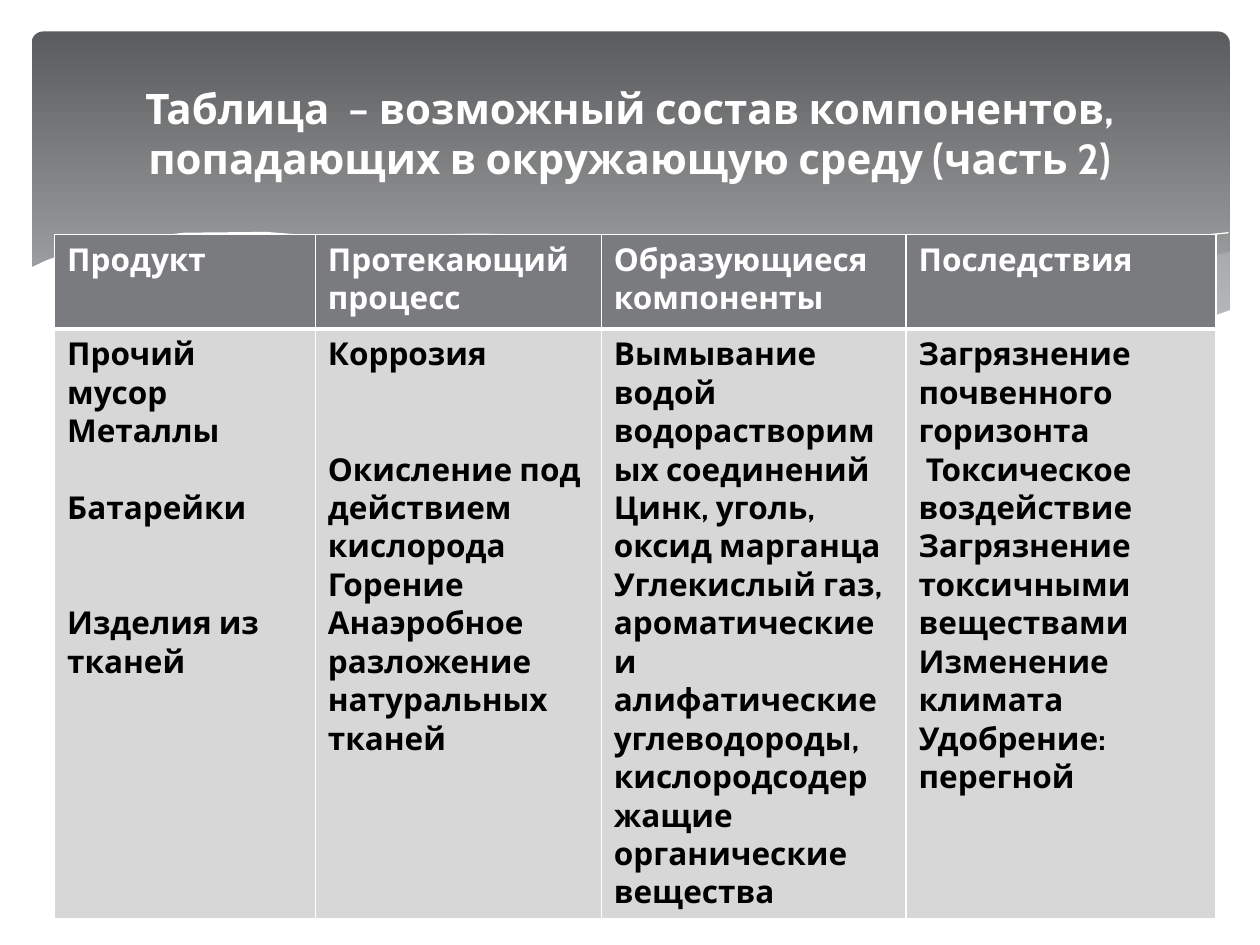
"""Build a slide with a table of waste products and their environmental effects."""
from lxml import etree
from pptx import Presentation
from pptx.dml.color import RGBColor
from pptx.enum.shapes import MSO_SHAPE
from pptx.enum.text import MSO_ANCHOR, PP_ALIGN
from pptx.oxml.ns import qn
from pptx.util import Pt

ROUNDED = MSO_SHAPE.ROUNDED_RECTANGLE
MIDDLE = MSO_ANCHOR.MIDDLE
CENTER = PP_ALIGN.CENTER

THEME = {
    "font": "Cabin", "title_size": 24, "table_size": 18, "line_height": 21.96,
    "white": "FFFFFF", "black": "000000", "mist": "CDD7D9",
    "banner_top": "5B5C5E", "banner_bottom": "AFB0B2",
    "header": "797B7E", "body": "D7D7D8", "thin": 1, "thick": 3,
}

TITLE = "Таблица  – возможный состав компонентов, попадающих в окружающую среду (часть 2)"
HEADERS = ["Продукт", "Протекающий процесс", "Образующиеся компоненты", "Последствия"]
COLUMN_WIDTHS = [149, 163.4, 174.2, 177]
ROW_HEIGHTS = [54, 273.6]

# Each entry: lines of space above, wording
EFFECTS = [
    [(0, "Прочий мусор"), (0, "Металлы"), (1, "Батарейки"), (2, "Изделия из тканей")],
    [(0, "Коррозия"), (2, "Окисление под действием кислорода"), (0, "Горение"),
     (0, "Анаэробное разложение натуральных тканей")],
    [(0, "Вымывание водой водорастворимых соединений"),
     (0, "Цинк, уголь, оксид марганца Углекислый газ, ароматические и алифатические "
         "углеводороды, кислородсодержащие органические вещества")],
    [(0, "Загрязнение почвенного горизонта"), (0, " Токсическое воздействие"),
     (0, "Загрязнение токсичными веществами"), (0, "Изменение климата"),
     (0, "Удобрение: перегной")],
]

RIGHT_WAVE = [
    (702, 144), (682, 148.5), (652, 153.5), (620, 160.5), (579.5, 170.5), (542, 178),
    (508, 185), (476, 191), (508, 195), (536, 198), (562, 199.5), (586, 200),
    (615, 199), (640, 196), (663, 191), (683, 185), (703, 178), (703, 144)]
MIDDLE_WAVE = [
    (643, 196.5), (602.5, 191), (558, 183), (508, 173), (453, 160), (420, 152),
    (390, 146), (361, 141), (335, 137.5), (302, 134.5), (274, 133), (248, 134),
    (225, 135.5), (206, 137.5), (246, 143), (291, 152), (323, 160), (382, 173),
    (433, 183.5), (479, 191.5), (520, 197), (557, 199.5), (589, 200), (617, 199.5)]
FALLING_LINE = [
    (222.5, 140.5), (236, 138), (261, 136), (288.5, 134.5), (324, 135.5), (367, 138),
    (419, 144), (479, 153.5), (547, 168), (598, 180.5), (653, 196)]
RISING_LINE = [(441, 185), (484, 173.5), (539, 160.5), (602, 147), (655, 138), (702, 133)]
FRONT_WAVE = [
    (703.5, 177), (677, 186.5), (647, 193.5), (612, 198), (571, 199.5), (523, 197),
    (467, 191), (400, 180), (322, 158.5), (263, 145.5), (210, 137), (152, 132.5),
    (105, 133), (68, 137.5), (42, 143), (26, 149), (16.5, 153.5), (16.5, 237),
    (703.5, 237)]

# Each entry: outline, fill opacity in percent (None for an open line)
WAVES = [(RIGHT_WAVE, 29), (MIDDLE_WAVE, 40), (FALLING_LINE, None),
         (RISING_LINE, None), (FRONT_WAVE, 100)]


def color(name):
    return RGBColor.from_string(THEME[name])


def style(paragraph, size, ink):
    font = paragraph.font
    font.name, font.size, font.bold = THEME["font"], Pt(THEME[size]), True
    font.color.rgb = color(ink)


def add_banner(slide):
    banner = slide.shapes.add_shape(ROUNDED, Pt(18), Pt(18), Pt(684.7), Pt(194.4))
    banner.shadow.inherit = False
    banner.adjustments[0] = 0.034
    banner.line.fill.background()
    banner.fill.gradient()
    banner.fill.gradient_angle = 270
    tones = (("banner_top", 0), ("banner_bottom", 0.9))
    for stop, (name, position) in zip(banner.fill.gradient_stops, tones):
        stop.color.rgb, stop.position = color(name), position


def add_wave(slide, outline, opacity):
    points = [(Pt(x), Pt(y)) for x, y in outline]
    builder = slide.shapes.build_freeform(*points[0])
    builder.add_line_segments(points[1:], close=opacity is not None)
    wave = builder.convert_to_shape()
    wave.shadow.inherit = False
    if opacity is None:
        wave.fill.background()
        wave.line.color.rgb = color("white")
        wave.line.width = Pt(0)
        return
    wave.line.fill.background()
    wave.fill.solid()
    wave.fill.fore_color.rgb = color("white" if opacity == 100 else "mist")
    if opacity < 100:
        tint = wave.fill._xPr.find(qn("a:solidFill"))[0]
        etree.SubElement(tint, qn("a:alpha"), val=str(opacity * 1000))


def set_borders(cell, top, bottom):
    properties = cell._tc.get_or_add_tcPr()
    thin = THEME["thin"]
    for side, width in (("L", thin), ("R", thin), ("T", top), ("B", bottom)):
        border = etree.SubElement(properties, qn(f"a:ln{side}"), w=str(Pt(width)))
        fill = etree.SubElement(border, qn("a:solidFill"))
        etree.SubElement(fill, qn("a:srgbClr"), val=THEME["white"])


def fill_cell(cell, entries, background, ink, top, bottom):
    set_borders(cell, THEME[top], THEME[bottom])
    cell.fill.solid()
    cell.fill.fore_color.rgb = color(background)
    frame = cell.text_frame
    for index, (gap, wording) in enumerate(entries):
        paragraph = frame.add_paragraph() if index else frame.paragraphs[0]
        paragraph.text = wording
        paragraph.space_before = Pt(gap * THEME["line_height"])
        style(paragraph, "table_size", ink)


def add_effects_table(slide):
    table = slide.shapes.add_table(
        len(ROW_HEIGHTS), len(HEADERS), Pt(31.2), Pt(134),
        Pt(sum(COLUMN_WIDTHS)), Pt(sum(ROW_HEIGHTS))).table
    for row, height in zip(table.rows, ROW_HEIGHTS):
        row.height = Pt(height)
    for index, (width, header, entries) in enumerate(zip(COLUMN_WIDTHS, HEADERS, EFFECTS)):
        table.columns[index].width = Pt(width)
        fill_cell(table.cell(0, index), [(0, header)], "header", "white", "thin", "thick")
        fill_cell(table.cell(1, index), entries, "body", "black", "thick", "thin")


def add_title(slide):
    frame = slide.shapes.add_textbox(Pt(36), Pt(26.6), Pt(648), Pt(98.6)).text_frame
    frame.word_wrap = True
    frame.vertical_anchor = MIDDLE
    heading = frame.paragraphs[0]
    heading.text = TITLE
    heading.alignment = CENTER
    style(heading, "title_size", "white")


def main():
    deck = Presentation()
    deck.slide_width, deck.slide_height = Pt(720), Pt(540)
    slide = deck.slides.add_slide(deck.slide_layouts[6])
    add_banner(slide)
    for outline, opacity in WAVES:
        add_wave(slide, outline, opacity)
    add_effects_table(slide)
    add_title(slide)
    deck.save("out.pptx")


if __name__ == "__main__":
    main()
